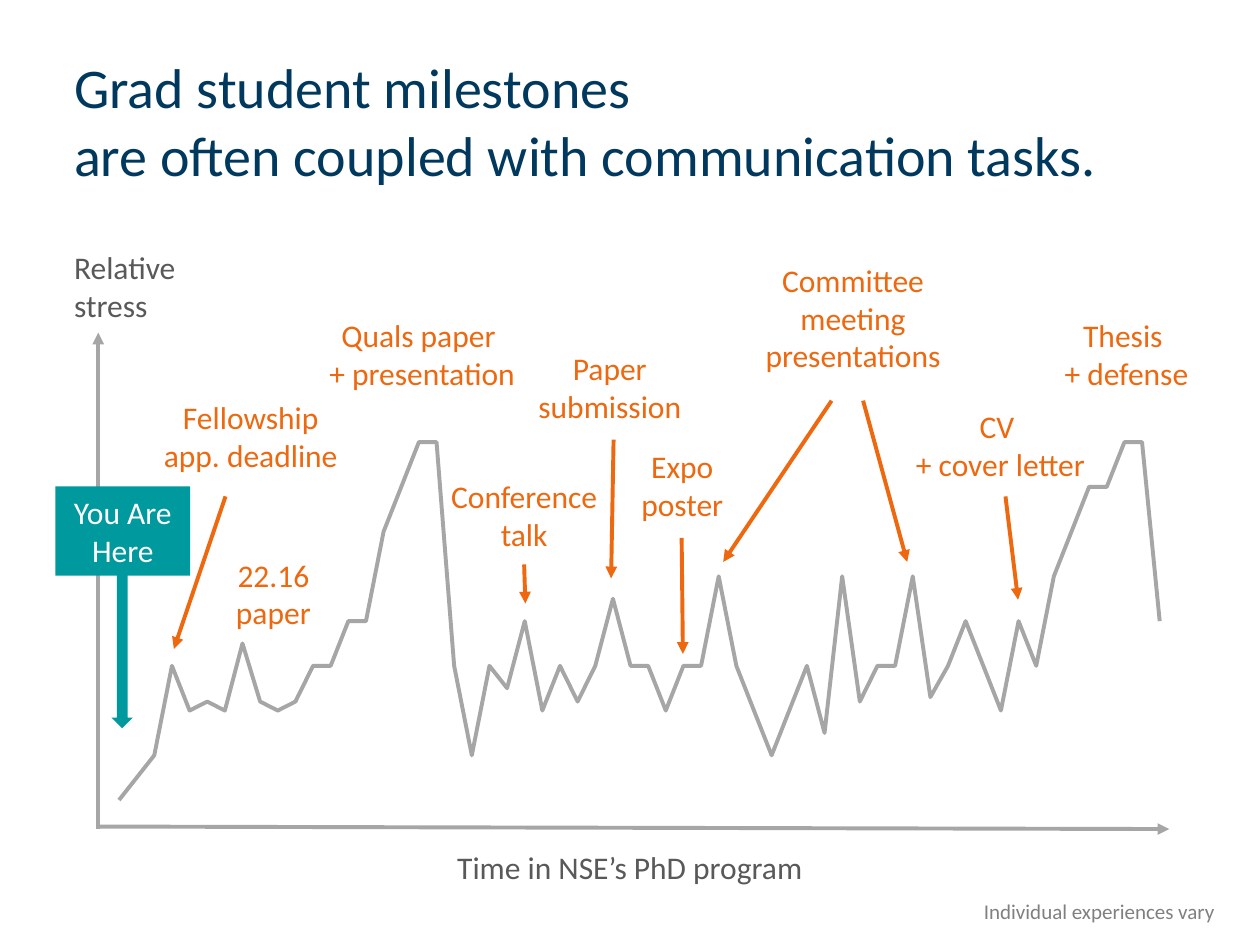
from lxml.etree import SubElement
from pptx import Presentation
from pptx.chart.data import CategoryChartData
from pptx.dml.color import RGBColor
from pptx.enum.chart import XL_CHART_TYPE as ChartType
from pptx.enum.shapes import MSO_CONNECTOR as Connector, MSO_SHAPE as Shape
from pptx.enum.text import MSO_ANCHOR as Anchor, MSO_AUTO_SIZE as AutoSize, PP_ALIGN as Align
from pptx.oxml import parse_xml
from pptx.oxml.ns import nsdecls, qn
from pptx.util import Inches, Pt

NAVY, ORANGE, TEAL = "01395E", "EE680F", "00999E"
DARK, MID, LIGHT, WHITE = "595959", "808080", "A6A6A6", "FFFFFF"

STRESS = [
    20, 25, 30, 50, 40, 42, 40, 55, 42, 40, 42, 50, 50, 60, 60,
    80, 90, 100, 100, 50, 30, 50, 45, 60, 40, 50, 42, 50, 65, 50,
    50, 40, 50, 50, 70, 50, 40, 30, 40, 50, 35, 70, 42, 50, 50,
    70, 43, 50, 60, 50, 40, 60, 50, 70, 80, 90, 90, 100, 100, 60,
]

MILESTONES = [
    ("22.16 paper", (1.71, 4.36, 0.92, 0.71), []),
    ("Committee meeting presentations", (5.96, 2.02, 1.62, 1.01),
     [(6.6, 3.18, 5.74, 4.46), (6.85, 3.18, 7.2, 4.46)]),
    ("Paper submission", (4.03, 2.72, 1.62, 0.71), [(4.87, 3.49, 4.85, 4.59)]),
    ("Conference talk", (3.35, 3.74, 1.62, 0.71), [(4.16, 4.48, 4.17, 4.79)]),
    ("Expo poster", (4.84, 3.5, 1.15, 0.71), [(5.41, 4.27, 5.42, 5.19)]),
    ("Thesis \v+ defense", (8.13, 2.46, 1.62, 0.71), []),
    ("Quals paper \v+ presentation", (2.45, 2.46, 1.8, 0.71), []),
    ("Fellowship app. deadline", (1.18, 3.11, 1.62, 0.71), [(1.79, 3.94, 1.38, 5.15)]),
    ("CV \v+ cover letter", (7.09, 3.18, 1.7, 0.71), [(7.98, 3.94, 8.08, 4.76)]),
]


def color(hex_value):
    """Turn a hex string into a colour."""
    return RGBColor.from_string(hex_value)


def inches(values):
    """Turn plain numbers into lengths."""
    return [Inches(value) for value in values]


def apply_format(target, values):
    """Set each named attribute of the target."""
    for name, value in values.items():
        setattr(target, name, value)


def write(shape, words, hex_value, size=18, align=Align.LEFT, anchor=Anchor.TOP):
    """Put one formatted paragraph into a shape."""
    frame = shape.text_frame
    frame.text = words
    paragraph = frame.paragraphs[0]
    paragraph.alignment = align
    paragraph.font.color.rgb = color(hex_value)
    apply_format(paragraph.font, {"name": "Calibri", "size": Pt(size)})
    apply_format(frame, {"word_wrap": True, "vertical_anchor": anchor,
                         "auto_size": AutoSize.SHAPE_TO_FIT_TEXT})


def add_label(slide, box, words, hex_value, **style):
    """Add a text box."""
    write(slide.shapes.add_textbox(*inches(box)), words, hex_value, **style)


def add_arrow(slide, ends, hex_value):
    """Add a straight arrow between two points."""
    arrow = slide.shapes.add_connector(Connector.STRAIGHT, *inches(ends))
    arrow.line.color.rgb = color(hex_value)
    arrow.line.width = Pt(2.25)
    SubElement(arrow.line._get_or_add_ln(), qn("a:tailEnd"), type="triangle")
    SubElement(arrow._element.spPr, qn("a:effectLst"))


def add_block(slide, kind, box, hex_value):
    """Add a filled shape without outline or shadow."""
    block = slide.shapes.add_shape(kind, *inches(box))
    block.shadow.inherit = False
    block.fill.solid()
    block.fill.fore_color.rgb = color(hex_value)
    block.line.fill.background()
    return block


def add_stress_curve(slide, box):
    """Draw the stress values as a bare line chart filling its box."""
    data = CategoryChartData()
    data.categories = [str(number) for number in range(1, len(STRESS) + 1)]
    data.add_series("Series 1", STRESS)
    chart = slide.shapes.add_chart(ChartType.LINE, *inches(box), data).chart
    chart.font.color.rgb = color("000000")
    apply_format(chart.font, {"name": "Calibri", "size": Pt(10)})
    apply_format(chart, {"has_legend": False, "has_title": False})
    apply_format(chart.value_axis, {"visible": False, "has_major_gridlines": False,
                                    "minimum_scale": 0, "maximum_scale": 120})
    chart.category_axis.visible = False
    chart.plots[0].vary_by_categories = False
    curve = chart.plots[0].series[0]
    curve.smooth = False
    curve.format.line.color.rgb = color(LIGHT)
    curve.format.line.width = Pt(2.25)
    plot_area = chart._chartSpace.chart.plotArea
    for layout in plot_area.findall(qn("c:layout")):
        plot_area.remove(layout)
    places = {"x": 0.02, "y": 0.02, "w": 0.96, "h": 0.96}
    settings = '<c:layoutTarget val="inner"/><c:xMode val="edge"/><c:yMode val="edge"/>'
    settings += "".join(f'<c:{side} val="{part}"/>' for side, part in places.items())
    plot_area.insert(0, parse_xml(
        f'<c:layout {nsdecls("c")}><c:manualLayout>{settings}</c:manualLayout></c:layout>'))


def add_stress_graph(slide, left, top, width, height):
    """Add both axes, their titles and the curve within a box."""
    bottom = top + height
    add_arrow(slide, (left, bottom - 0.02, left + width, bottom), LIGHT)
    add_arrow(slide, (left, bottom, left, top), LIGHT)
    add_stress_curve(slide, (left - 0.08, top + 0.07, width + 0.25, height + 0.5))
    add_label(slide, (left - 0.29, top - 0.72, 1.37, 0.71), "Relative stress", DARK)
    add_label(slide, (left + 2.75, bottom + 0.1, 2.99, 0.4),
              "Time in NSE’s PhD program", DARK)


def add_milestones(slide):
    """Add each milestone with its arrows to the curve."""
    for words, box, arrows in MILESTONES:
        add_label(slide, box, words, ORANGE, align=Align.CENTER)
        for ends in arrows:
            add_arrow(slide, ends, ORANGE)


def add_you_are_here(slide, left, top, width, height):
    """Add the position marker: a sign with an arrow below it."""
    add_block(slide, Shape.DOWN_ARROW,
              (left + width / 2 - 0.09, top + 0.18, 0.17, 1.74), TEAL)
    sign = add_block(slide, Shape.RECTANGLE, (left, top, width, height), TEAL)
    write(sign, "You Are Here", WHITE, align=Align.CENTER, anchor=Anchor.MIDDLE)


def main():
    """Build and save the slide."""
    deck = Presentation()
    deck.slide_width, deck.slide_height = inches((10, 7.5))
    slide = deck.slides.add_slide(deck.slide_layouts[6])
    add_stress_graph(slide, 0.78, 2.64, 8.5, 3.94)
    add_label(slide, (0.49, 0.37, 8.95, 1.18),
              "Grad student milestones \vare often coupled with communication tasks.",
              NAVY, size=32)
    add_milestones(slide)
    add_you_are_here(slide, 0.44, 3.86, 1.07, 0.71)
    add_label(slide, (7.23, 7.08, 2.51, 0.31), "Individual experiences vary",
              MID, size=12, align=Align.RIGHT)
    deck.save("out.pptx")


if __name__ == "__main__":
    main()
